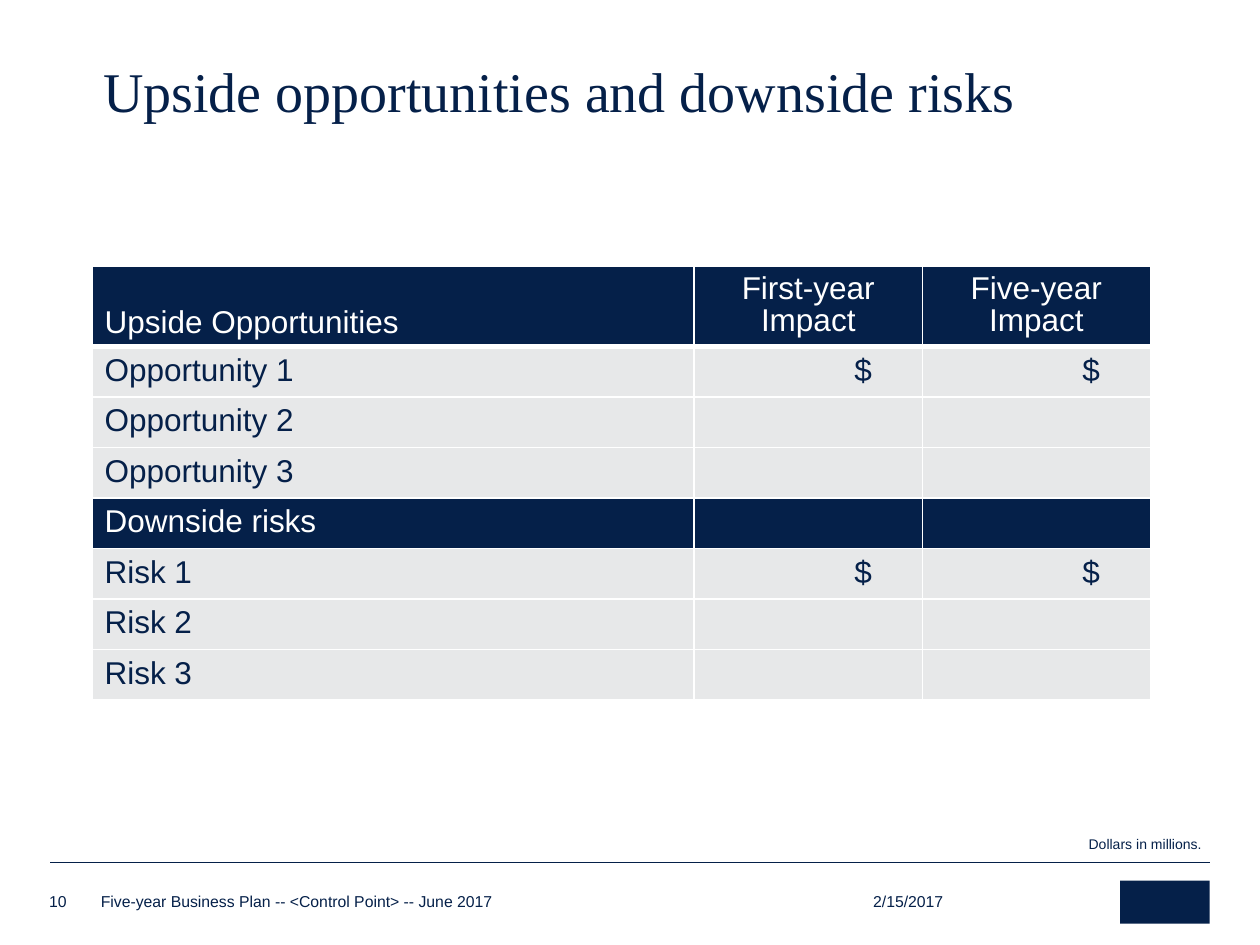
from lxml import etree
from pptx import Presentation
from pptx.dml.color import RGBColor
from pptx.enum import shapes, text
from pptx.oxml.ns import qn
from pptx.util import Inches, Pt

NAVY, GREY, WHITE = "052049", "E7E8E9", "FFFFFF"
ROWS = [
    ("Upside Opportunities", "First-year Impact", "Five-year Impact"),
    ("Opportunity 1", "$", "$"),
    ("Opportunity 2", "", ""),
    ("Opportunity 3", "", ""),
    ("Downside risks", "", ""),
    ("Risk 1", "$", "$"),
    ("Risk 2", "", ""),
    ("Risk 3", "", ""),
]
BAND_ROWS = (0, 4)
COL_WIDTHS = (4.78, 1.81, 1.81)
HEADER_HEIGHT, ROW_HEIGHT = 0.6, 0.4


def rgb(color):
    return RGBColor.from_string(color)


def write(tf, words, size, color=NAVY, font="Arial", spacing=1.0, align=None):
    p = tf.paragraphs[0]
    p.alignment = align
    p.line_spacing = spacing
    r = p.add_run()
    r.text = words
    r.font.size = Pt(size)
    r.font.name = font
    r.font.color.rgb = rgb(color)


def add_text(slide, box, words, size, inset=0, anchor=text.MSO_ANCHOR.TOP, **style):
    tf = slide.shapes.add_textbox(*map(Inches, box)).text_frame
    tf.word_wrap = True
    tf.vertical_anchor = anchor
    tf.margin_left = tf.margin_right = Inches(inset)
    tf.margin_top = tf.margin_bottom = Inches(inset / 2)
    write(tf, words, size, **style)


def add_rule(slide, left, right, y):
    line = slide.shapes.add_connector(
        shapes.MSO_CONNECTOR.STRAIGHT, Inches(left), Inches(y), Inches(right), Inches(y))
    line.line.color.rgb = rgb(NAVY)
    line.line.width = Pt(0.25)
    etree.SubElement(line._element.spPr, qn("a:effectLst"))


def add_block(slide, box):
    sp = slide.shapes.add_shape(shapes.MSO_SHAPE.RECTANGLE, *map(Inches, box))
    sp.shadow.inherit = False
    sp.fill.solid()
    sp.fill.fore_color.rgb = rgb(NAVY)
    sp.line.fill.background()


def set_borders(cell, **widths):
    """Draw white borders; the keys L, R, T and B give widths in points."""
    tc_pr = cell._tc.get_or_add_tcPr()
    for i, (side, width) in enumerate(widths.items()):
        ln = etree.Element(qn(f"a:ln{side}"), w=str(Pt(width)))
        fill = etree.SubElement(ln, qn("a:solidFill"))
        etree.SubElement(fill, qn("a:srgbClr"), val=WHITE)
        tc_pr.insert(i, ln)


def fill_cell(cell, row, col, words):
    band = row in BAND_ROWS
    cell.fill.solid()
    cell.fill.fore_color.rgb = rgb(NAVY if band else GREY)
    set_borders(cell, L=1, R=1, T=3 if row == 1 else 1, B=3 if row == 0 else 1)
    if not words:
        return
    align, spacing = None, 0.9
    cell.vertical_anchor = text.MSO_ANCHOR.MIDDLE
    if row == 0 and col == 0:
        cell.vertical_anchor = text.MSO_ANCHOR.BOTTOM
    elif row == 0:
        align = text.PP_ALIGN.CENTER
    elif col > 0:
        align, spacing = text.PP_ALIGN.RIGHT, 1.0
        cell.vertical_anchor = text.MSO_ANCHOR.TOP
        cell.margin_right = Inches(0.4)
    write(cell.text_frame, words, 18, WHITE if band else NAVY,
          spacing=spacing, align=align)


def add_impact_table(slide, left, top):
    height = HEADER_HEIGHT + ROW_HEIGHT * (len(ROWS) - 1)
    table = slide.shapes.add_table(
        len(ROWS), len(COL_WIDTHS), Inches(left), Inches(top),
        Inches(sum(COL_WIDTHS)), Inches(height)).table
    table.horz_banding = False
    for column, width in zip(table.columns, COL_WIDTHS):
        column.width = Inches(width)
    for row, entries in enumerate(ROWS):
        table.rows[row].height = Inches(ROW_HEIGHT if row else HEADER_HEIGHT)
        for col, words in enumerate(entries):
            fill_cell(table.cell(row, col), row, col, words)


def main():
    prs = Presentation()
    prs.slide_width, prs.slide_height = Inches(10), Inches(7.5)
    slide = prs.slides.add_slide(prs.slide_layouts[6])

    add_rule(slide, 0.4, 9.6, 6.84)
    add_block(slide, (8.89, 6.99, 0.71, 0.34))
    add_text(slide, (0.72, 0.48, 8.84, 0.57), "Upside opportunities and downside risks",
             32, inset=0.1, font="Times New Roman", spacing=0.85)
    footer = [
        (6.93, 1.01, "2/15/2017"),
        (0.8, 4.71, "Five-year Business Plan -- <Control Point> -- June 2017"),
        (0.39, 0.27, "10"),
    ]
    for left, width, words in footer:
        add_text(slide, (left, 7.06, width, 0.17), words, 9,
                 anchor=text.MSO_ANCHOR.BOTTOM)
    add_impact_table(slide, 0.73, 2.11)
    add_text(slide, (8.64, 6.65, 1.66, 0.12), "Dollars in millions.", 8, spacing=0.9)

    prs.save("out.pptx")


if __name__ == "__main__":
    main()
